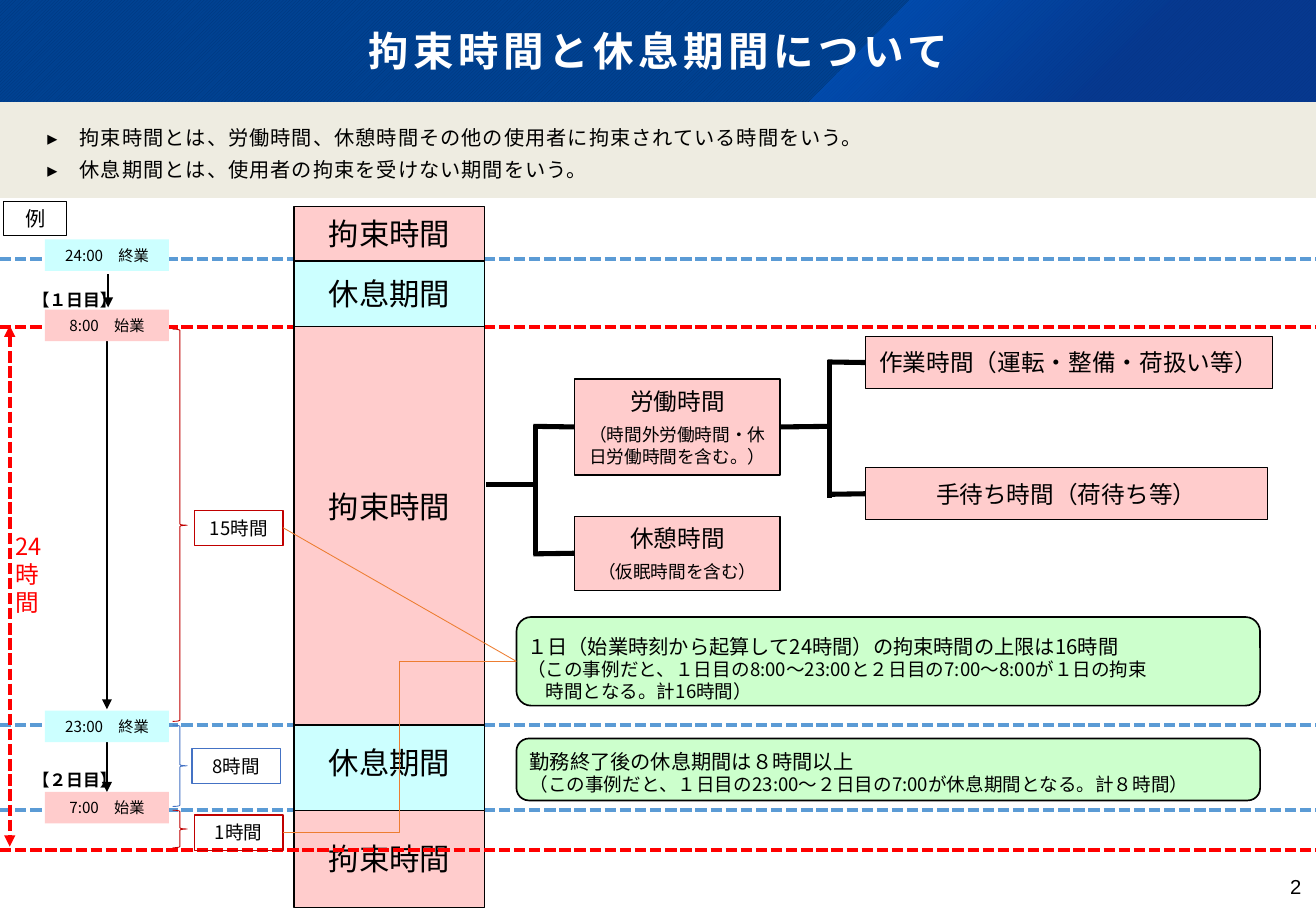
from dataclasses import dataclass

from lxml import etree
from pptx import Presentation
from pptx import util as u
from pptx.dml import color
from pptx.enum import dml, shapes, text
from pptx.oxml import ns, parse_xml


@dataclass(frozen=True)
class Theme:
    font: str = "Noto Sans CJK JP"
    plain_font: str = "Arial"
    black: str = "000000"
    white: str = "FFFFFF"
    navy: str = "003579"
    blue: str = "004292"
    sand: str = "EEECE1"
    pink: str = "FFCCCC"
    aqua: str = "CCFFFF"
    green: str = "CCFFCC"
    red: str = "FF0000"
    dark_red: str = "C00000"
    sky: str = "5B9BD5"
    brace_blue: str = "4472C4"
    orange: str = "ED7D31"
    title: float = 24
    column: float = 18
    node: float = 14
    body: float = 12
    detail: float = 11
    note: float = 10.5
    day: float = 10
    clock: float = 9
    leading: float = 1.19


theme = Theme()
deck = Presentation()
deck.slide_width, deck.slide_height = u.Inches(10.83), u.Inches(7.5)
page = deck.slides.add_slide(deck.slide_layouts[5])
RECT = shapes.MSO_SHAPE.RECTANGLE
ROUND = shapes.MSO_SHAPE.ROUNDED_RECTANGLE
BRACE = shapes.MSO_SHAPE.RIGHT_BRACE
CENTER, LEFT = text.PP_ALIGN.CENTER, text.PP_ALIGN.LEFT


def add_box(at, paras=(), fill=None, edge=None, kind=RECT, box=None, width=0.75,
            align=CENTER, anchor=text.MSO_ANCHOR.MIDDLE, colour=theme.black,
            font=theme.font, bold=None, spacing=0, leading=theme.leading,
            gap=0, insets=(0.1, 0.05), wrap=True):
    """Place a box and write its paragraphs, given as (words, size)."""
    place = [u.Inches(n) for n in at]
    if box is not None:
        box.left, box.top, box.width, box.height = place
    elif kind is None:
        box = page.shapes.add_textbox(*place)
    else:
        box = page.shapes.add_shape(kind, *place)
        box.shadow.inherit = False
    if fill:
        box.fill.solid()
        box.fill.fore_color.rgb = color.RGBColor.from_string(fill)
    else:
        box.fill.background()
    if edge:
        box.line.color.rgb = color.RGBColor.from_string(edge)
        box.line.width = u.Pt(width)
    else:
        box.line.fill.background()
    frame = box.text_frame
    frame.word_wrap = wrap
    frame.auto_size = text.MSO_AUTO_SIZE.NONE
    frame.vertical_anchor = anchor
    frame.margin_left = frame.margin_right = u.Inches(insets[0])
    frame.margin_top = frame.margin_bottom = u.Inches(insets[1])
    for number, (words, size) in enumerate(paras):
        para = frame.add_paragraph() if number else frame.paragraphs[0]
        para.alignment = align
        para.line_spacing = u.Pt(size * leading)
        para.space_before = u.Pt(gap if number else 0)
        span = para.add_run()
        span.text = words
        span.font.size = u.Pt(size)
        span.font.name = font
        span.font.bold = bold
        span.font.color.rgb = color.RGBColor.from_string(colour)
        props = span.font._element
        etree.SubElement(props, ns.qn("a:ea")).set("typeface", font)
        if spacing:
            props.set("spc", str(int(spacing * 100)))
    return box


def add_line(start, end, colour, width, dashed=False, arrows=(),
             kind=shapes.MSO_CONNECTOR.STRAIGHT):
    """Draw a connector; arrows may hold headEnd and tailEnd."""
    line = page.shapes.add_connector(kind, *[u.Inches(n) for n in (*start, *end)])
    line.line.color.rgb = color.RGBColor.from_string(colour)
    line.line.width = u.Pt(width)
    if dashed:
        line.line.dash_style = dml.MSO_LINE.SQUARE_DOT
    for arrow in arrows:
        etree.SubElement(line.line._ln, ns.qn(f"a:{arrow}")).set("type", "triangle")
    etree.SubElement(line._element.spPr, ns.qn("a:effectLst"))
    return line


# Header band with its glossy corner
band = add_box((0, 0, 10.83, 0.91))
band.fill.patterned()
band.fill.pattern = dml.MSO_PATTERN.DARK_UPWARD_DIAGONAL
band.fill.fore_color.rgb = color.RGBColor.from_string(theme.navy)
band.fill.back_color.rgb = color.RGBColor.from_string(theme.blue)
outline = page.shapes.build_freeform(u.Inches(7.49), u.Inches(0))
outline.add_line_segments(
    [(u.Inches(x), u.Inches(y)) for x, y in ((10.83, 0), (10.83, 0.91), (6.58, 0.91))])
corner = outline.convert_to_shape()
corner.shadow.inherit = False
corner.line.fill.background()
corner._element.spPr.find(ns.qn("a:custGeom")).addnext(parse_xml(
    f'<a:gradFill {ns.nsdecls("a")}><a:gsLst>'
    '<a:gs pos="0"><a:srgbClr val="0064DF"><a:alpha val="50000"/></a:srgbClr></a:gs>'
    '<a:gs pos="62000"><a:srgbClr val="0C338E"><a:alpha val="55000"/></a:srgbClr></a:gs>'
    '</a:gsLst><a:path path="circle"><a:fillToRect r="100000" b="100000"/></a:path>'
    '</a:gradFill>'))

# Title and definitions
title = page.shapes.title
page.shapes._spTree.append(title._element)
add_box((0, 0, 10.83, 0.83), [("拘束時間と休息期間について", theme.title)],
        box=title, colour=theme.white, bold=True, spacing=2.7)
add_box((0, 0.84, 10.83, 0.79),
        [("▸　拘束時間とは、労働時間、休憩時間その他の使用者に拘束されている時間をいう。", theme.body),
         ("▸　休息期間とは、使用者の拘束を受けない期間をいう。", theme.body)],
        fill=theme.sand, align=LEFT, font=theme.plain_font, spacing=0.6,
        leading=1.54, insets=(0.39, 0.16))

# Breakdown of the restraint time
nodes = {}
for name, at, paras in (
    ("work", (7.12, 2.77, 3.35, 0.43), [("作業時間（運転・整備・荷扱い等）", theme.node)]),
    ("wait", (7.12, 3.85, 3.31, 0.43), [("手待ち時間（荷待ち等）", theme.node)]),
    ("break", (4.73, 4.25, 1.69, 0.61),
     [("休憩時間", theme.node), ("（仮眠時間を含む）", theme.note)]),
    ("labour", (4.73, 3.12, 1.69, 0.79),
     [("労働時間", theme.node), ("（時間外労働時間・休日労働時間を含む。）", theme.note)]),
):
    nodes[name] = add_box(at, paras, theme.pink, theme.black, gap=5.25)
for start, end, source, target in (
    ((6.42, 3.51), (6.83, 3.51), "labour", None),
    ((6.83, 2.96), (6.83, 4.1), None, None),
    ((6.81, 2.98), (7.12, 2.98), None, "work"),
    ((6.81, 4.07), (7.12, 4.07), None, "wait"),
    ((4, 3.99), (4.41, 3.99), None, None),
    ((4.41, 3.5), (4.41, 4.57), None, None),
    ((4.39, 3.51), (4.73, 3.51), None, "labour"),
    ((4.39, 4.56), (4.73, 4.56), None, "break"),
):
    branch = add_line(start, end, theme.black, 3)
    if source:
        branch.begin_connect(nodes[source], 3)
    if target:
        branch.end_connect(nodes[target], 1)

# Time boundaries
for y, colour in ((2.13, theme.sky), (2.69, theme.red), (5.97, theme.sky), (6.67, theme.sky)):
    add_line((0, y), (10.83, y), colour, 2.25, dashed=True)

# Column of alternating restraint and rest
for top, height, fill, words in (
    (2.15, 4.53, theme.aqua, None), (1.7, 0.45, theme.pink, "拘束時間"),
    (6.67, 0.8, theme.pink, "拘束時間"), (2.69, 3.28, theme.pink, None),
):
    add_box((2.42, top, 1.57, height), [(words, theme.column)] if words else (),
            fill, theme.black, wrap=False)
for top, words in ((2.22, "休息期間"), (3.97, "拘束時間"), (6.08, "休息期間")):
    add_box((2.42, top, 1.57, 0.4), [(words, theme.column)], kind=None,
            anchor=text.MSO_ANCHOR.TOP)

# Clock times
for x, top, bottom in ((0.88, 2.81, 5.84), (0.88, 6.1, 6.52), (0.89, 2.26, 2.53)):
    add_line((x, top), (x, bottom), theme.black, 1.25, arrows=["tailEnd"])
for top, words, fill in (
    (1.97, "24:00　終業", theme.aqua), (2.55, "8:00　始業", theme.pink),
    (5.85, "23:00　終業", theme.aqua), (6.52, "7:00　始業", theme.pink),
):
    add_box((0.37, top, 1.02, 0.26), [(words, theme.clock)], fill)
for top, words in ((2.34, "【１日目】"), (6.29, "【２日目】")):
    add_box((0.17, top, 0.9, 0.27), [(words, theme.day)], kind=None, align=LEFT,
            anchor=text.MSO_ANCHOR.TOP, bold=True, wrap=False)

# Rules in green panels
limit = add_box((4.25, 5.08, 6.12, 0.73), (), theme.green, theme.black, ROUND, width=1)
rest = add_box((4.25, 6.08, 6.12, 0.51), (), theme.green, theme.black, ROUND, width=1)
rest.adjustments[0] = 0.2
for at, paras in (
    ((4.24, 5.17, 6.09, 0.91),
     [("１日（始業時刻から起算して24時間）の拘束時間の上限は16時間", theme.body),
      ("（この事例だと、１日目の8:00～23:00と２日目の7:00～8:00が１日の拘束", theme.detail),
      ("　時間となる。計16時間）", theme.detail)]),
    ((4.26, 6.12, 6.25, 0.5),
     [("勤務終了後の休息期間は８時間以上", theme.body),
      ("（この事例だと、１日目の23:00～２日目の7:00が休息期間となる。計８時間）", theme.detail)]),
):
    add_box(at, paras, kind=None, align=LEFT, anchor=text.MSO_ANCHOR.TOP)

# Page number
add_box((10.02, 7.2, 0.69, 0.3), [("2", theme.body)], kind=None,
        align=text.PP_ALIGN.RIGHT, anchor=text.MSO_ANCHOR.TOP,
        font=theme.plain_font, insets=(0, 0))

# The 24-hour span
add_line((0, 7), (10.83, 7), theme.red, 2.25, dashed=True)
add_line((0.08, 2.68), (0.08, 6.97), theme.red, 2.25, dashed=True,
         arrows=["headEnd", "tailEnd"])
add_box((0.03, 1.66, 0.52, 0.28), [("例", theme.body)], edge=theme.black)
add_box((0.03, 4.33, 0.5, 0.81), [("24時間", theme.node)], kind=None, align=LEFT,
        anchor=text.MSO_ANCHOR.TOP, colour=theme.red)

# Durations with braces
durations = {}
for words, edge, brace_top, brace_height, left, top in (
    ("15時間", theme.dark_red, 2.71, 3.23, 1.6, 4.2),
    ("1時間", theme.dark_red, 6.67, 0.31, 1.6, 6.71),
    ("8時間", theme.brace_blue, 5.97, 0.67, 1.58, 6.16),
):
    add_box((1.42, brace_top, 0.12, brace_height), edge=edge, kind=BRACE, width=0.5)
    durations[words] = add_box((left, top, 0.73, 0.29), [(words, theme.detail)], edge=edge)

# Links from durations to the daily limit
for words, y, kind in (("15時間", 4.34, shapes.MSO_CONNECTOR.STRAIGHT),
                       ("1時間", 6.85, shapes.MSO_CONNECTOR.ELBOW)):
    link = add_line((2.33, y), (4.25, 5.44), theme.orange, 0.5, kind=kind)
    link.begin_connect(durations[words], 3)
    link.end_connect(limit, 1)

deck.save("out.pptx")
